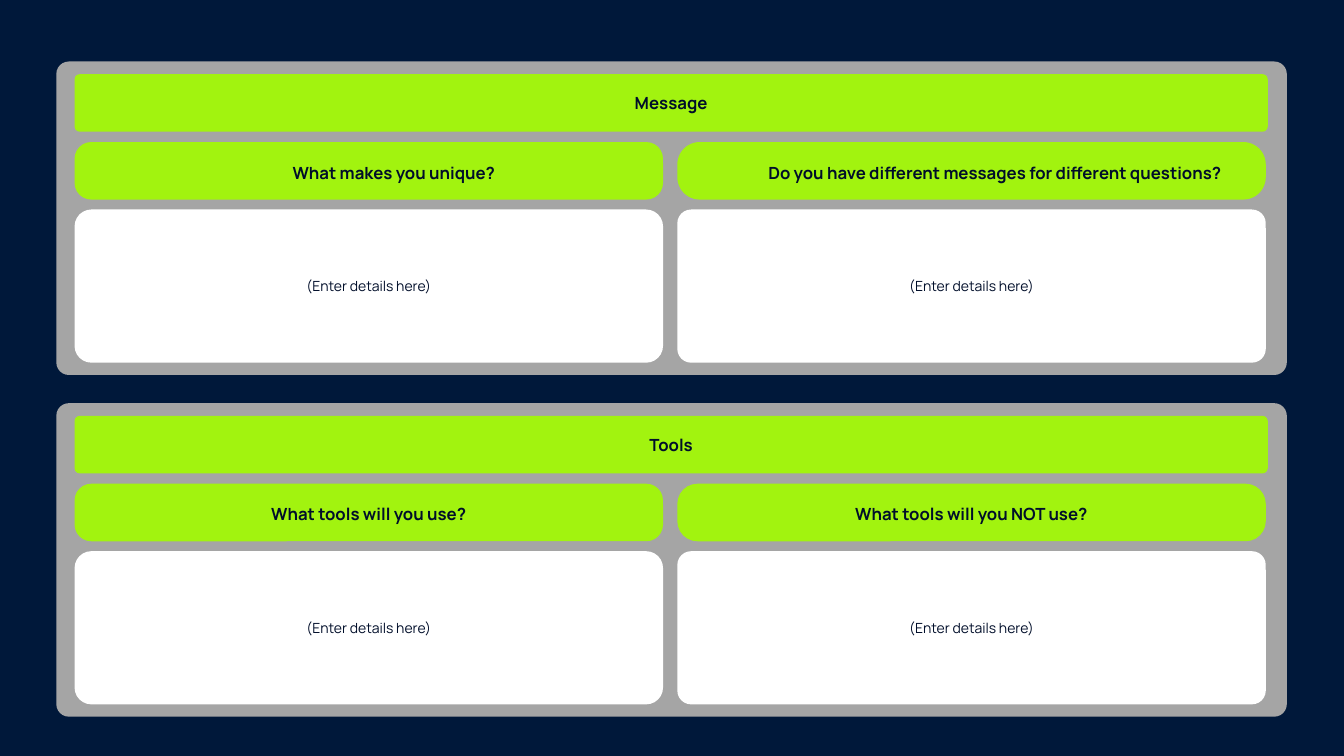
from dataclasses import dataclass

from pptx import Presentation
from pptx.dml.color import RGBColor
from pptx.enum.shapes import MSO_SHAPE
from pptx.enum.text import MSO_ANCHOR, PP_ALIGN
from pptx.util import Cm, Pt


@dataclass(frozen=True)
class Theme:
    navy: str = "00183A"
    ink: str = "000E2A"
    grey: str = "A5A5A5"
    lime: str = "A2F30F"
    white: str = "FFFFFF"
    font: str = "Manrope"
    heading: float = 12
    body: float = 10


class Board:
    def __init__(self, prs, theme):
        self.theme = theme
        self.s = prs.slides.add_slide(prs.slide_layouts[6])
        fill = self.s.background.fill
        fill.solid()
        fill.fore_color.rgb = RGBColor.from_string(theme.navy)

    def box(self, x, y, w, h, color, radius):
        sp = self.s.shapes.add_shape(
            MSO_SHAPE.ROUNDED_RECTANGLE, Cm(x), Cm(y), Cm(w), Cm(h))
        sp.adjustments[0] = radius
        sp.shadow.inherit = False
        sp.fill.solid()
        sp.fill.fore_color.rgb = RGBColor.from_string(color)
        sp.line.fill.background()
        return sp

    def label(self, sp, text, size, bold=False):
        tf = sp.text_frame
        tf.word_wrap = True
        tf.vertical_anchor = MSO_ANCHOR.MIDDLE
        tf.margin_left = tf.margin_right = Cm(0.25)
        tf.margin_top = tf.margin_bottom = Cm(0.25)
        p = tf.paragraphs[0]
        p.alignment = PP_ALIGN.CENTER
        r = p.add_run()
        r.text = text
        r.font.name = self.theme.font
        r.font.size = Pt(size)
        r.font.bold = bold
        r.font.color.rgb = RGBColor.from_string(self.theme.ink)
        return p

    def title(self, x, y, text):
        sp = self.box(x, y, 30.07, 1.45, self.theme.lime, 0.09)
        self.label(sp, text, self.theme.heading, True)

    def question(self, x, y, text, radius, indent):
        sp = self.box(x, y, 14.83, 1.45, self.theme.lime, radius)
        p = self.label(sp, text, self.theme.heading, True)
        p.line_spacing = 1.15
        p.space_before = Pt(24)
        p.space_after = Pt(33)
        if indent:
            pPr = p._p.get_or_add_pPr()
            pPr.set("marL", str(Cm(indent)))
            pPr.set("indent", "0")

    def answer(self, x, y, radius):
        sp = self.box(x, y, 14.83, 3.86, self.theme.white, radius)
        self.label(sp, "(Enter details here)", self.theme.body)

    def panel(self, y, title, questions, indent):
        self.box(1.42, y, 31.01, 7.9, self.theme.grey, 0.04)
        left, top = 1.88, y + 0.32
        self.title(left, top, title)
        for i, (text, radius) in enumerate(questions):
            x = left + i * 15.19
            self.question(x, top + 1.71, text, radius, indent)
            self.answer(x, top + 3.41, (0.11, 0.09)[i])


PANELS = [
    ("Message", [("What makes you unique?", 0.29),
                 ("Do you have different messages for different questions? ", 0.39)], 1.27),
    ("Tools", [("What tools will you use?", 0.29),
               ("What tools will you NOT use?", 0.35)], 0),
]


def main():
    prs = Presentation()
    prs.slide_width, prs.slide_height = Cm(33.87), Cm(19.05)
    board = Board(prs, Theme())
    for i, (title, questions, indent) in enumerate(PANELS):
        board.panel(1.55 + i * 8.61, title, questions, indent)
    prs.save("out.pptx")


if __name__ == "__main__":
    main()
